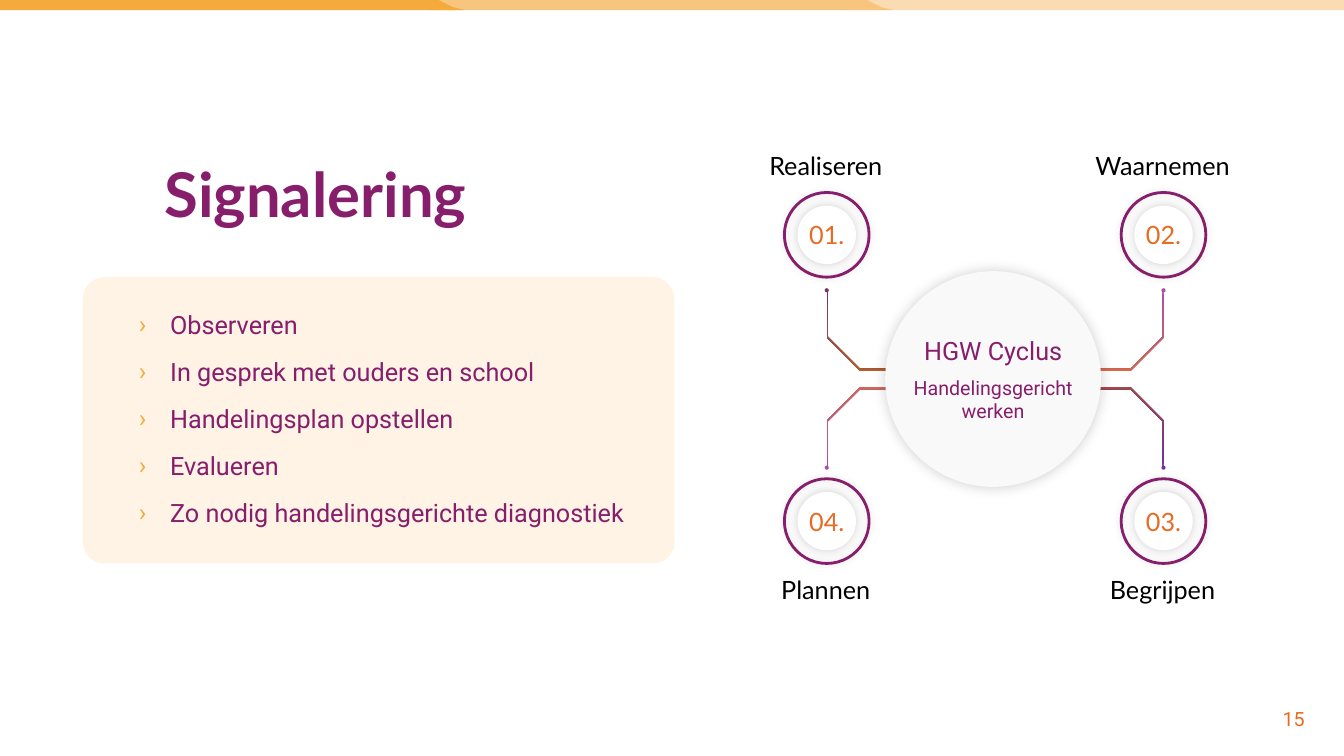
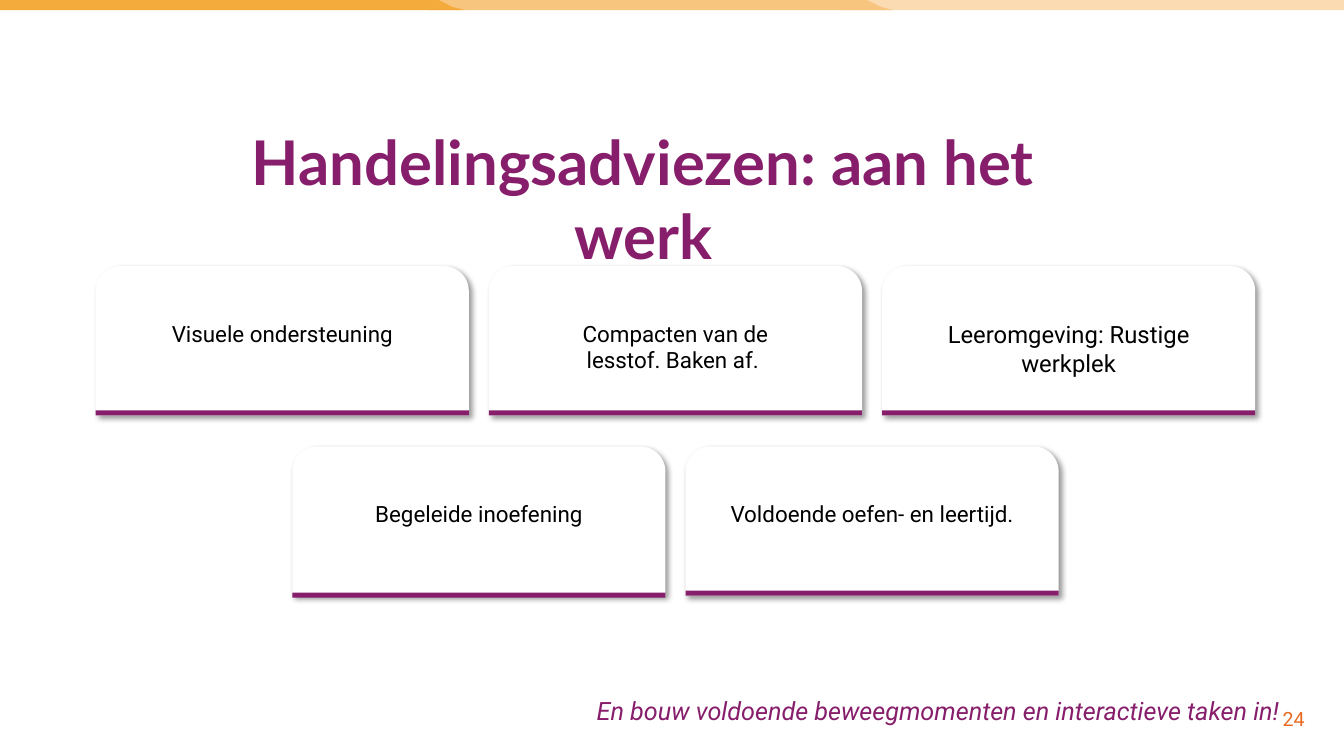
from dataclasses import dataclass

from lxml.etree import SubElement
from pptx import Presentation
from pptx.dml.color import RGBColor
from pptx.enum.shapes import MSO_SHAPE
from pptx.enum.text import MSO_ANCHOR, MSO_AUTO_SIZE, PP_ALIGN
from pptx.oxml.ns import qn
from pptx.util import Inches, Pt


@dataclass(frozen=True)
class Theme:
    """Colours, fonts and type sizes shared by the slides."""
    plum: str = "871E6B"
    orange: str = "E86B23"
    amber: str = "F5AB3C"
    amber_mid: str = "F8C57F"
    amber_pale: str = "FBDCB2"
    cream: str = "FEF3E5"
    hub: str = "F9F9F9"
    white: str = "FFFFFF"
    black: str = "000000"
    heading: str = "Lato"
    body: str = "Roboto"
    title_size: int = 44
    text_size: int = 18
    card_size: int = 16
    card_size_large: int = 17
    small_size: int = 14


THEME = Theme()


@dataclass(frozen=True)
class Card:
    """One advice card and the settings in which it differs."""
    words: str
    size: int = THEME.card_size
    side: float = 0.17
    bar_drop: float = 1.43


@dataclass(frozen=True)
class Step:
    """One step of the cycle, with its side of the hub and arm colours."""
    number: str
    name: str
    across: int
    down: int
    tip: str
    root: str


HUB_X, HUB_Y = 9.85, 3.76
RINGS_X, RINGS_Y = 9.87, 3.75
STEPS = (
    Step("01.", "Realiseren", -1, -1, "7A3068", "B0602C"),
    Step("02.", "Waarnemen", 1, -1, "A850A8", "D46A48"),
    Step("03.", "Begrijpen", 1, 1, "7030A0", "A04A48"),
    Step("04.", "Plannen", -1, 1, "A850A0", "D0685C"),
)
CARD_ROWS = (
    (2.64, (
        Card("Visuele ondersteuning"),
        Card("Compacten van de lesstof. Baken af. ", side=0.59),
        Card("Leeromgeving: Rustige werkplek", size=THEME.card_size_large),
    )),
    (4.43, (
        Card("Begeleide inoefening", bar_drop=1.45),
        Card("Voldoende oefen- en leertijd."),
    )),
)
ACTIONS = (
    "Observeren",
    "In gesprek met ouders en school",
    "Handelingsplan opstellen",
    "Evalueren",
    "Zo nodig handelingsgerichte diagnostiek",
)


def colour(code):
    """Turn a hex code into a colour."""
    return RGBColor.from_string(code)


def add_span(para, words, size, shade, font=THEME.body, bold=False, italic=False):
    """Add one formatted run to a paragraph."""
    span = para.add_run()
    span.text = words
    span.font.name = font
    span.font.size = Pt(size)
    span.font.bold = bold
    span.font.italic = italic
    span.font.color.rgb = colour(shade)


def set_frame(box, anchor=MSO_ANCHOR.TOP):
    """Make a text frame wrap at a fixed size and return it."""
    frame = box.text_frame
    frame.word_wrap = True
    frame.auto_size = MSO_AUTO_SIZE.NONE
    frame.vertical_anchor = anchor
    return frame


def add_label(page, left, top, width, height, words, size, shade, **style):
    """Add a centred single-paragraph text box."""
    box = page.shapes.add_textbox(Inches(left), Inches(top), Inches(width), Inches(height))
    para = set_frame(box).paragraphs[0]
    para.alignment = PP_ALIGN.CENTER
    add_span(para, words, size, shade, **style)


def finish(shape, fill):
    """Give a shape a plain fill, no outline and no shadow."""
    shape.shadow.inherit = False
    shape.fill.solid()
    shape.fill.fore_color.rgb = colour(fill)
    shape.line.fill.background()
    return shape


def add_block(page, kind, left, top, width, height, fill):
    """Add a plain preset shape."""
    shape = page.shapes.add_shape(kind, Inches(left), Inches(top), Inches(width), Inches(height))
    return finish(shape, fill)


def add_disc(page, x, y, diameter, fill):
    """Add a circle around a centre point."""
    radius = diameter / 2
    return add_block(page, MSO_SHAPE.OVAL, x - radius, y - radius, diameter, diameter, fill)


def add_outline(page, points, fill):
    """Add a closed polygon through points given in inches."""
    corners = [(Inches(x), Inches(y)) for x, y in points]
    builder = page.shapes.build_freeform(*corners[0])
    builder.add_line_segments(corners[1:], close=True)
    return finish(builder.convert_to_shape(), fill)


def add_shadow(shape, opacity, blur, distance=0, angle=0):
    """Add a soft black outer shadow."""
    effects = shape._element.spPr.find(qn("a:effectLst"))
    shadow = SubElement(effects, qn("a:outerShdw"), blurRad=str(Pt(blur)), dist=str(Pt(distance)),
                        dir=str(angle * 60000), algn="ctr", rotWithShape="0")
    shade = SubElement(shadow, qn("a:srgbClr"), val=THEME.black)
    SubElement(shade, qn("a:alpha"), val=str(opacity * 1000))


def add_bullet(para):
    """Give a paragraph a hanging amber chevron."""
    properties = para._p.get_or_add_pPr()
    properties.set("marL", str(Inches(0.31)))
    properties.set("indent", str(-Inches(0.31)))
    shade = SubElement(properties, qn("a:buClr"))
    SubElement(shade, qn("a:srgbClr"), val=THEME.amber)
    SubElement(properties, qn("a:buFont"), typeface=THEME.body)
    SubElement(properties, qn("a:buChar"), char="›")


def add_band(page):
    """Draw the three-part band along the top edge."""
    add_block(page, MSO_SHAPE.RECTANGLE, 8.34, 0, 4.99, 0.1, THEME.amber_pale)
    for left, right, fill in ((4.25, 8.86, THEME.amber_mid), (0, 4.61, THEME.amber)):
        curve = [(right - 0.26, 0), (right - 0.24, 0.01), (right - 0.12, 0.07), (right, 0.1)]
        add_outline(page, [(left, 0), *curve, (left, 0.1)], fill)


def add_page(deck, number, words, left, top, width, align):
    """Add a titled page with the band and the page number."""
    page = deck.slides.add_slide(deck.slide_layouts[5])
    add_band(page)
    title = page.shapes.title
    title.left, title.top = Inches(left), Inches(top)
    title.width, title.height = Inches(width), Inches(0.84)
    para = set_frame(title).paragraphs[0]
    para.alignment = align
    add_span(para, words, THEME.title_size, THEME.plum, font=THEME.heading, bold=True)
    add_label(page, 12.56, 6.96, 0.54, 0.34, number, THEME.small_size, THEME.orange)
    return page


def add_actions(page):
    """Add the cream panel with its bulleted list."""
    panel = add_block(page, MSO_SHAPE.ROUNDED_RECTANGLE, 0.82, 2.75, 5.87, 2.84, THEME.cream)
    panel.adjustments[0] = 0.076
    box = page.shapes.add_textbox(Inches(1.28), Inches(3.02), Inches(5.3), Inches(2.29))
    frame = set_frame(box)
    for index, words in enumerate(ACTIONS):
        para = frame.add_paragraph() if index else frame.paragraphs[0]
        add_bullet(para)
        if index:
            para.space_before = Pt(12)
        add_span(para, words, THEME.text_size, THEME.plum)


def add_arm(page, step):
    """Draw the bent arm from a step to the hub."""
    offsets = ((0.89, 0.08), (1.34, 0.08), (1.67, 0.41), (1.67, 0.88),
               (1.66, 0.88), (1.66, 0.42), (1.34, 0.1), (0.89, 0.1))
    points = [(RINGS_X + step.across * x, HUB_Y + step.down * y) for x, y in offsets]
    arm = add_outline(page, points, step.tip)
    arm.fill.gradient()
    arm.fill.gradient_angle = 90 if step.down > 0 else 270
    for stop, shade in zip(arm.fill.gradient_stops, (step.tip, step.root)):
        stop.color.rgb = colour(shade)
    add_disc(page, *points[3], 0.04, step.tip)


def add_step(page, step):
    """Draw the numbered ring and the name of a step."""
    x, y = RINGS_X + step.across * 1.67, RINGS_Y + step.down * 1.42
    ring = add_disc(page, x, y, 0.84, THEME.white)
    shade = ring._element.spPr.find(qn("a:solidFill")).find(qn("a:srgbClr"))
    SubElement(shade, qn("a:alpha"), val="25000")
    ring.line.color.rgb = colour(THEME.plum)
    ring.line.width = Pt(2)
    add_shadow(ring, 10, 5)
    core = add_disc(page, x, y, 0.58, THEME.white)
    add_shadow(core, 15, 5)
    frame = set_frame(core, MSO_ANCHOR.MIDDLE)
    frame.margin_left = frame.margin_right = frame.margin_top = frame.margin_bottom = 0
    para = frame.paragraphs[0]
    para.alignment = PP_ALIGN.CENTER
    add_span(para, step.number, THEME.text_size, THEME.orange, font=THEME.heading)
    top = 1.44 if step.down < 0 else 5.65
    add_label(page, x - 0.9, top, 1.78, 0.4, step.name, THEME.text_size, THEME.black,
              font=THEME.heading)


def add_cycle(page):
    """Draw the hub with its four steps."""
    for step in STEPS:
        add_arm(page, step)
    add_shadow(add_disc(page, HUB_X, HUB_Y, 2.14, THEME.hub), 20, 10)
    for step in STEPS:
        add_step(page, step)
    left = HUB_X - 0.91
    add_label(page, left, 3.28, 1.82, 0.4, "HGW Cyclus", THEME.text_size, THEME.plum)
    add_label(page, left, 3.68, 1.82, 0.57, "Handelingsgericht werken", THEME.small_size, THEME.plum)


def add_card(page, card, left, top, width):
    """Draw one card with its text and bottom bar."""
    shape = add_block(page, MSO_SHAPE.ROUND_2_SAME_RECTANGLE, left, top, width, 1.48, THEME.white)
    add_shadow(shape, 40, 4, 3, 45)
    frame = set_frame(shape)
    frame.margin_top = Inches(0.46)
    frame.margin_left = frame.margin_right = Inches(card.side)
    para = frame.paragraphs[0]
    para.alignment = PP_ALIGN.CENTER
    add_span(para, card.words, card.size, THEME.black)
    add_block(page, MSO_SHAPE.RECTANGLE, left, top + card.bar_drop, width, 0.05, THEME.plum)


def add_card_row(page, top, cards, centre=6.7, width=3.7, gap=0.2):
    """Centre a row of equally spaced cards."""
    pitch = width + gap
    start = centre - (len(cards) * pitch - gap) / 2
    for index, card in enumerate(cards):
        add_card(page, card, start + index * pitch, top, width)


def main():
    """Build and save the deck."""
    deck = Presentation()
    deck.slide_width, deck.slide_height = Inches(13.33), Inches(7.5)

    signals = add_page(deck, "15", "Signalering", 1.53, 1.5, 4.1, PP_ALIGN.LEFT)
    add_actions(signals)
    add_cycle(signals)

    advice = add_page(deck, "24", "Handelingsadviezen: aan het werk", 1.9, 1.18, 8.96,
                      PP_ALIGN.CENTER)
    for top, cards in CARD_ROWS:
        add_card_row(advice, top, cards)
    add_label(advice, 5.6, 6.85, 7.41, 0.4,
              "En bouw voldoende beweegmomenten en interactieve taken in!",
              THEME.text_size, THEME.plum, italic=True)
    deck.save("out.pptx")


if __name__ == "__main__":
    main()
